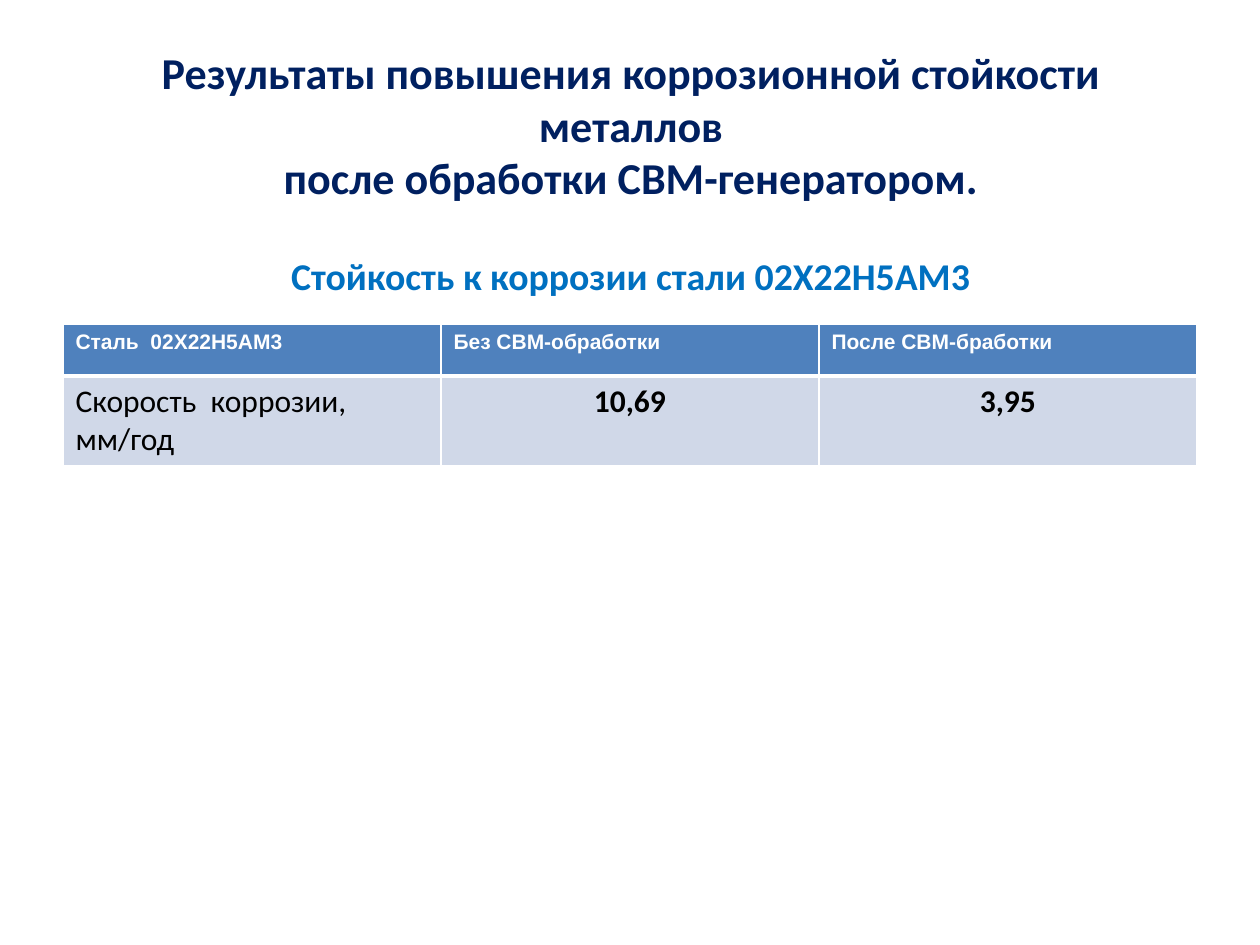
"""Builds a slide on the corrosion resistance of treated steel."""
import pptx
import pptx.util
import pptx.dml.color
import pptx.enum.text
import pptx.oxml

PX = 914400 // 126
COLORS = {
    "navy": "002060",
    "blue": "0070C0",
    "header": "4F81BD",
    "body": "D0D8E8",
    "white": "FFFFFF",
    "black": "000000",
}
ALIGN = pptx.enum.text.PP_ALIGN
TITLE = [
    ("Результаты повышения коррозионной стойкости металлов", 25.2, "navy", 0),
    ("после обработки СВМ-генератором.", 25.2, "navy", 0),
    ("Стойкость к коррозии стали 02Х22Н5АМ3", 21.6, "blue", 28),
]
ROWS = [
    ["Сталь  02Х22Н5АМ3", "Без СВМ-обработки", "После СВМ-бработки"],
    ["Скорость  коррозии,\nмм/год", "10,69", "3,95"],
]
ROW_HEIGHTS = [52, 88]


def px(n):
    """Turn pixels into EMU."""
    return pptx.util.Emu(n * PX)


def rgb(name):
    """Look up a named colour."""
    return pptx.dml.color.RGBColor.from_string(COLORS[name])


def style_paragraph(p, font, size, color, bold, align):
    """Align a paragraph and format its runs."""
    p.alignment = align
    for r in p.runs:
        r.font.name = font
        r.font.size = pptx.util.Pt(size)
        r.font.bold = bold
        r.font.color.rgb = rgb(color)


def add_title(s):
    """Fill the title placeholder with the heading and the table caption."""
    sp = s.shapes.title
    sp.left, sp.top, sp.width, sp.height = px(64), px(45), px(1134), px(248)
    tf = sp.text_frame
    tf.word_wrap = True
    tf.auto_size = pptx.enum.text.MSO_AUTO_SIZE.NONE
    tf.vertical_anchor = pptx.enum.text.MSO_ANCHOR.TOP
    tf.margin_top = tf.margin_bottom = 0
    tf.text = "\n".join(text for text, *_ in TITLE)
    for p, (_, size, color, gap) in zip(tf.paragraphs, TITLE):
        style_paragraph(p, "Calibri", size, color, True, ALIGN.CENTER)
        p.space_before = pptx.util.Pt(gap)


def set_borders(cell, bottom):
    """Draw white cell borders, with the bottom width in points."""
    tc_pr = cell._tc.get_or_add_tcPr()
    for side, width in (("L", 1), ("R", 1), ("T", 1), ("B", bottom)):
        tc_pr.append(pptx.oxml.parse_xml(
            f'<a:ln{side} xmlns:a="http://schemas.openxmlformats.org/drawingml/2006/main"'
            f' w="{pptx.util.Pt(width)}"><a:solidFill><a:srgbClr val="{COLORS["white"]}"/>'
            f'</a:solidFill></a:ln{side}>'))


def fill_cell(cell, text, is_header, is_label):
    """Write and format one table cell."""
    set_borders(cell, 3 if is_header else 1)
    cell.fill.solid()
    cell.fill.fore_color.rgb = rgb("header" if is_header else "body")
    cell.text_frame.text = text
    for p in cell.text_frame.paragraphs:
        if is_header:
            style_paragraph(p, "Arial", 12, "white", True, ALIGN.LEFT)
        else:
            align = ALIGN.LEFT if is_label else ALIGN.CENTER
            style_paragraph(p, "Calibri", 18, "black", not is_label, align)


def add_results_table(s):
    """Add the table of corrosion rates."""
    frame = s.shapes.add_table(len(ROWS), len(ROWS[0]), px(63), px(324),
                               px(1134), px(sum(ROW_HEIGHTS)))
    table = frame.table
    for i, (row, height) in enumerate(zip(ROWS, ROW_HEIGHTS)):
        table.rows[i].height = px(height)
        for j, text in enumerate(row):
            fill_cell(table.cell(i, j), text, i == 0, j == 0)


def main():
    """Build and save the slide."""
    prs = pptx.Presentation()
    prs.slide_width, prs.slide_height = px(1260), px(945)
    s = prs.slides.add_slide(prs.slide_layouts[5])
    add_title(s)
    add_results_table(s)
    prs.save("out.pptx")


if __name__ == "__main__":
    main()
